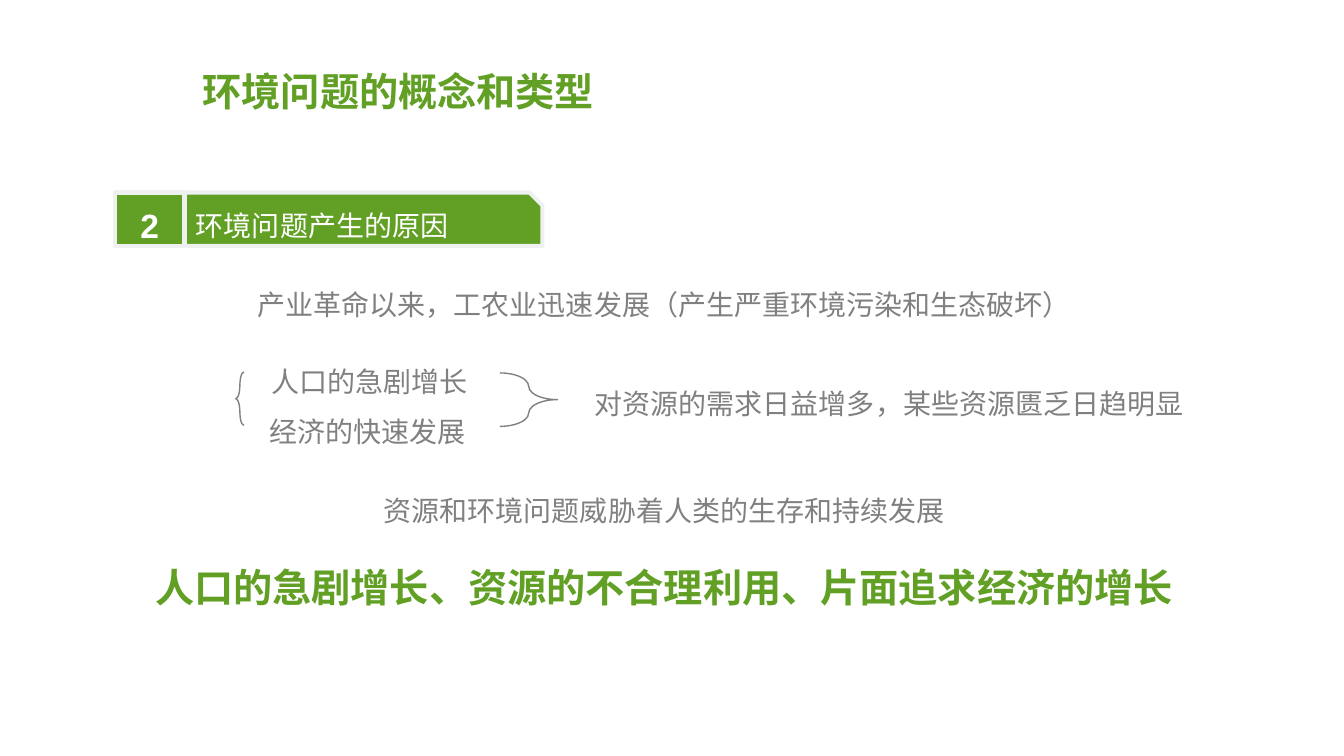
import pptx
import pptx.util
from pptx.dml.color import RGBColor
from pptx.enum.shapes import MSO_SHAPE
from pptx.enum.text import MSO_ANCHOR, MSO_AUTO_SIZE, PP_ALIGN

GREEN = RGBColor(0x61, 0xA0, 0x24)
GRAY = RGBColor(0x80, 0x80, 0x80)
PALE = RGBColor(0xEF, 0xF0, 0xF0)
WHITE = RGBColor(0xFF, 0xFF, 0xFF)

WIDTH = pptx.util.Inches(13.333)
HEIGHT = pptx.util.Inches(7.5)
BODY_HEIGHT = 6.67
HEADING_HEIGHT = 8.67
BRACE_HEIGHT = 7.07
TAG_TOP = 25.47


def area(left, top, width, height):
    """Turn percentages of the slide into lengths."""
    return (int(WIDTH * left / 100), int(HEIGHT * top / 100),
            int(WIDTH * width / 100), int(HEIGHT * height / 100))


def write(box, text, size=20, color=GRAY, bold=False, align=PP_ALIGN.LEFT,
          anchor=MSO_ANCHOR.TOP, wrap=True, grow=True):
    frame = box.text_frame
    frame.word_wrap = wrap
    frame.vertical_anchor = anchor
    frame.auto_size = MSO_AUTO_SIZE.SHAPE_TO_FIT_TEXT if grow else MSO_AUTO_SIZE.NONE
    para = frame.paragraphs[0]
    para.alignment = align
    para.line_spacing = 1.3
    span = para.add_run()
    span.text = text
    span.font.name = "Arial"
    span.font.size = pptx.util.Pt(size)
    span.font.bold = bold
    span.font.color.rgb = color


def add_text(shapes, text, left, top, width, height=BODY_HEIGHT, **style):
    write(shapes.add_textbox(*area(left, top, width, height)), text, **style)


def add_outline(shapes, kind, place, line, weight, fill=None, adjust=()):
    shape = shapes.add_shape(kind, *area(*place))
    shape.shadow.inherit = False
    if fill is None:
        shape.fill.background()
    else:
        shape.fill.solid()
        shape.fill.fore_color.rgb = fill
    shape.line.color.rgb = line
    shape.line.width = pptx.util.Pt(weight)
    for index, value in enumerate(adjust):
        shape.adjustments[index] = value
    return shape


def add_title(page, text):
    title = page.shapes.title
    title.left, title.top, title.width, title.height = area(14.33, 6.4, 30.98, HEADING_HEIGHT)
    write(title, text, size=28, color=GREEN, bold=True, wrap=False)


def add_section_tag(page, number, text):
    shapes = page.shapes.add_group_shape().shapes
    add_outline(shapes, MSO_SHAPE.SNIP_1_RECTANGLE, (13.73, TAG_TOP, 26.63, BRACE_HEIGHT),
                PALE, 3, GREEN, (0.24,))
    badge = add_outline(shapes, MSO_SHAPE.RECTANGLE, (8.55, TAG_TOP, 5.18, BRACE_HEIGHT),
                        PALE, 3, GREEN)
    write(badge, number, size=24, color=WHITE, bold=True, align=PP_ALIGN.CENTER,
          anchor=MSO_ANCHOR.MIDDLE, grow=False)
    add_text(shapes, text, 13.73, 25.6, 20.48, color=WHITE,
             align=PP_ALIGN.CENTER, wrap=False)


def main():
    deck = pptx.Presentation()
    deck.slide_width, deck.slide_height = WIDTH, HEIGHT
    page = deck.slides.add_slide(deck.slide_layouts[5])
    shapes = page.shapes

    # Headings
    add_title(page, "环境问题的概念和类型")
    add_section_tag(page, "2", "环境问题产生的原因")

    # Causes
    add_text(shapes, "产业革命以来，工农业迅速发展（产生严重环境污染和生态破坏）",
             6.3, 36, 86.25, align=PP_ALIGN.CENTER)
    add_text(shapes, "人口的急剧增长", 19.43, 46.27, 31.88)
    add_text(shapes, "经济的快速发展", 19.28, 52.8, 30.6)
    add_outline(shapes, MSO_SHAPE.LEFT_BRACE, (17.55, 49.2, 0.6, BRACE_HEIGHT),
                GRAY, 1, adjust=(1.83, 0.5))
    add_outline(shapes, MSO_SHAPE.RIGHT_BRACE, (37.2, 49.33, 4.28, BRACE_HEIGHT),
                GRAY, 1, adjust=(0.33, 0.5))
    add_text(shapes, "对资源的需求日益增多，某些资源匮乏日趋明显", 43.5, 49.07, 48.3)

    # Conclusion
    add_text(shapes, "资源和环境问题威胁着人类的生存和持续发展",
             17.55, 63.33, 63.75, align=PP_ALIGN.CENTER)
    add_text(shapes, "人口的急剧增长、资源的不合理利用、片面追求经济的增长",
             7.13, 72, 84.53, HEADING_HEIGHT, size=28, color=GREEN, bold=True,
             align=PP_ALIGN.CENTER)

    deck.save("out.pptx")


if __name__ == "__main__":
    main()
